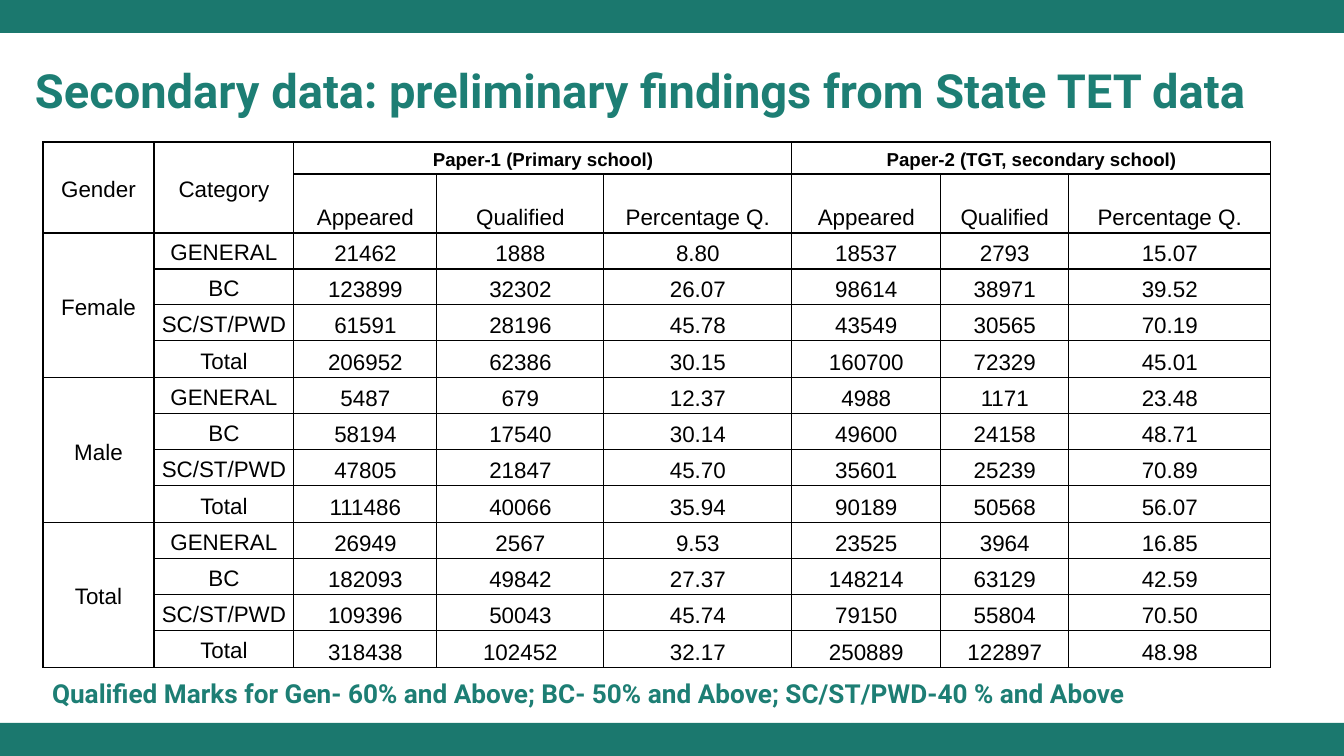
from typing import NamedTuple

from lxml.etree import SubElement
from pptx import Presentation
from pptx.dml.color import RGBColor
from pptx.enum.shapes import MSO_SHAPE
from pptx.enum.text import MSO_ANCHOR, MSO_AUTO_SIZE, PP_ALIGN
from pptx.oxml import parse_xml
from pptx.oxml.ns import nsdecls
from pptx.util import Emu, Pt

TEAL = RGBColor(0x1B, 0x78, 0x6E)
TITLE_TEAL = RGBColor(0x1D, 0x7E, 0x74)
BLACK = RGBColor(0, 0, 0)

PX_PER_INCH = 134.4
SLIDE_W, SLIDE_H = 1344, 756
BAR_H = 33
TABLE_X, TABLE_Y = 43, 142
COL_WIDTHS = [111, 140, 143, 167, 188, 149, 128, 202]
GROUP_ROW_HEIGHTS = [36, 36, 36, 37]
ROW_HEIGHTS = [32, 59] + GROUP_ROW_HEIGHTS * 3


class Box(NamedTuple):
    x: int
    y: int
    w: int
    h: int


class Style(NamedTuple):
    font: str
    size: float
    color: RGBColor
    bold: bool
    spacing: float
    align: PP_ALIGN


class Group(NamedTuple):
    gender: str
    rows: list[str]


BODY = Style("Arial", 12, BLACK, False, 1.15, PP_ALIGN.CENTER)
PAPER = BODY._replace(size=10, bold=True)
TITLE = Style("Roboto", 25.2, TITLE_TEAL, True, 0.9, PP_ALIGN.LEFT)
FOOTNOTE = TITLE._replace(size=14)

PAPERS = ["Paper-1 (Primary school)", "Paper-2 (TGT, secondary school)"]
MEASURES = ["Appeared", "Qualified", "Percentage Q."]
CATEGORIES = ["GENERAL", "BC", "SC/ST/PWD", "Total"]
GROUPS = [
    Group("Female", [
        "21462 1888 8.80 18537 2793 15.07",
        "123899 32302 26.07 98614 38971 39.52",
        "61591 28196 45.78 43549 30565 70.19",
        "206952 62386 30.15 160700 72329 45.01",
    ]),
    Group("Male", [
        "5487 679 12.37 4988 1171 23.48",
        "58194 17540 30.14 49600 24158 48.71",
        "47805 21847 45.70 35601 25239 70.89",
        "111486 40066 35.94 90189 50568 56.07",
    ]),
    Group("Total", [
        "26949 2567 9.53 23525 3964 16.85",
        "182093 49842 27.37 148214 63129 42.59",
        "109396 50043 45.74 79150 55804 70.50",
        "318438 102452 32.17 250889 122897 48.98",
    ]),
]


def px(n: int) -> Emu:
    return Emu(round(n * 914400 / PX_PER_INCH))


def write(tf, text: str, style: Style) -> None:
    p = tf.paragraphs[0]
    p.alignment = style.align
    p.line_spacing = style.spacing
    r = p.add_run()
    r.text = text
    r.font.name = style.font
    r.font.size = Pt(style.size)
    r.font.bold = style.bold
    r.font.color.rgb = style.color


def add_bar(slide, box: Box) -> None:
    sp = slide.shapes.add_shape(MSO_SHAPE.RECTANGLE, *map(px, box))
    sp.shadow.inherit = False
    sp.fill.solid()
    sp.fill.fore_color.rgb = TEAL
    sp.line.fill.background()


def set_heading(sp, box: Box, text: str, style: Style) -> None:
    sp.left, sp.top, sp.width, sp.height = map(px, box)
    tf = sp.text_frame
    tf.word_wrap = True
    tf.auto_size = MSO_AUTO_SIZE.NONE
    tf.vertical_anchor = MSO_ANCHOR.MIDDLE
    tf.margin_left = tf.margin_right = px(9)
    tf.margin_top = tf.margin_bottom = px(5)
    write(tf, text, style)


def format_cell(cell) -> None:
    """Clear the fill, set the margins and draw all four borders."""
    cell.fill.background()
    cell.margin_left = cell.margin_right = px(4)
    cell.margin_top = cell.margin_bottom = px(3)
    tc_pr = cell._tc.get_or_add_tcPr()
    for i, side in enumerate("LRTB"):
        ln = parse_xml(f'<a:ln{side} {nsdecls("a")} w="{Pt(0.67)}"/>')
        fill = SubElement(ln, f"{{{ln.nsmap['a']}}}solidFill")
        SubElement(fill, f"{{{ln.nsmap['a']}}}srgbClr", val=str(BLACK))
        tc_pr.insert(i, ln)


def fill_cell(cell, text: str, anchor: MSO_ANCHOR, style: Style = BODY) -> None:
    cell.vertical_anchor = anchor
    write(cell.text_frame, text, style)


def add_results_table(slide) -> None:
    box = Box(TABLE_X, TABLE_Y, sum(COL_WIDTHS), sum(ROW_HEIGHTS))
    table = slide.shapes.add_table(
        len(ROW_HEIGHTS), len(COL_WIDTHS), *map(px, box)).table
    table.first_row = table.horz_banding = False
    for col, width in zip(table.columns, COL_WIDTHS):
        col.width = px(width)
    for row, height in zip(table.rows, ROW_HEIGHTS):
        row.height = px(height)
    for cell in table.iter_cells():
        format_cell(cell)

    for c, label in enumerate(["Gender", "Category"]):
        table.cell(0, c).merge(table.cell(1, c))
        fill_cell(table.cell(0, c), label, MSO_ANCHOR.MIDDLE)
    for i, paper in enumerate(PAPERS):
        first = 2 + i * len(MEASURES)
        table.cell(0, first).merge(table.cell(0, first + len(MEASURES) - 1))
        fill_cell(table.cell(0, first), paper, MSO_ANCHOR.BOTTOM, PAPER)
        for c, measure in enumerate(MEASURES, first):
            fill_cell(table.cell(1, c), measure, MSO_ANCHOR.BOTTOM)

    for i, group in enumerate(GROUPS):
        top = 2 + i * len(CATEGORIES)
        table.cell(top, 0).merge(table.cell(top + len(CATEGORIES) - 1, 0))
        fill_cell(table.cell(top, 0), group.gender, MSO_ANCHOR.MIDDLE)
        for r, (category, values) in enumerate(zip(CATEGORIES, group.rows), top):
            fill_cell(table.cell(r, 1), category, MSO_ANCHOR.MIDDLE)
            for c, value in enumerate(values.split(), 2):
                fill_cell(table.cell(r, c), value, MSO_ANCHOR.BOTTOM)


def main() -> None:
    prs = Presentation()
    prs.slide_width, prs.slide_height = px(SLIDE_W), px(SLIDE_H)
    slide = prs.slides.add_slide(prs.slide_layouts[5])
    for y in (SLIDE_H - BAR_H, 0):
        add_bar(slide, Box(0, y, SLIDE_W, BAR_H))
    set_heading(slide.shapes.title, Box(26, 50, 1309, 86),
                "Secondary data: preliminary findings from State TET data", TITLE)
    add_results_table(slide)
    note_box = Box(43, 652, 1309, 86)
    set_heading(slide.shapes.add_textbox(*map(px, note_box)), note_box,
                "Qualified Marks for Gen- 60% and Above; BC- 50% and Above; "
                "SC/ST/PWD-40 % and Above", FOOTNOTE)
    prs.save("out.pptx")


if __name__ == "__main__":
    main()
